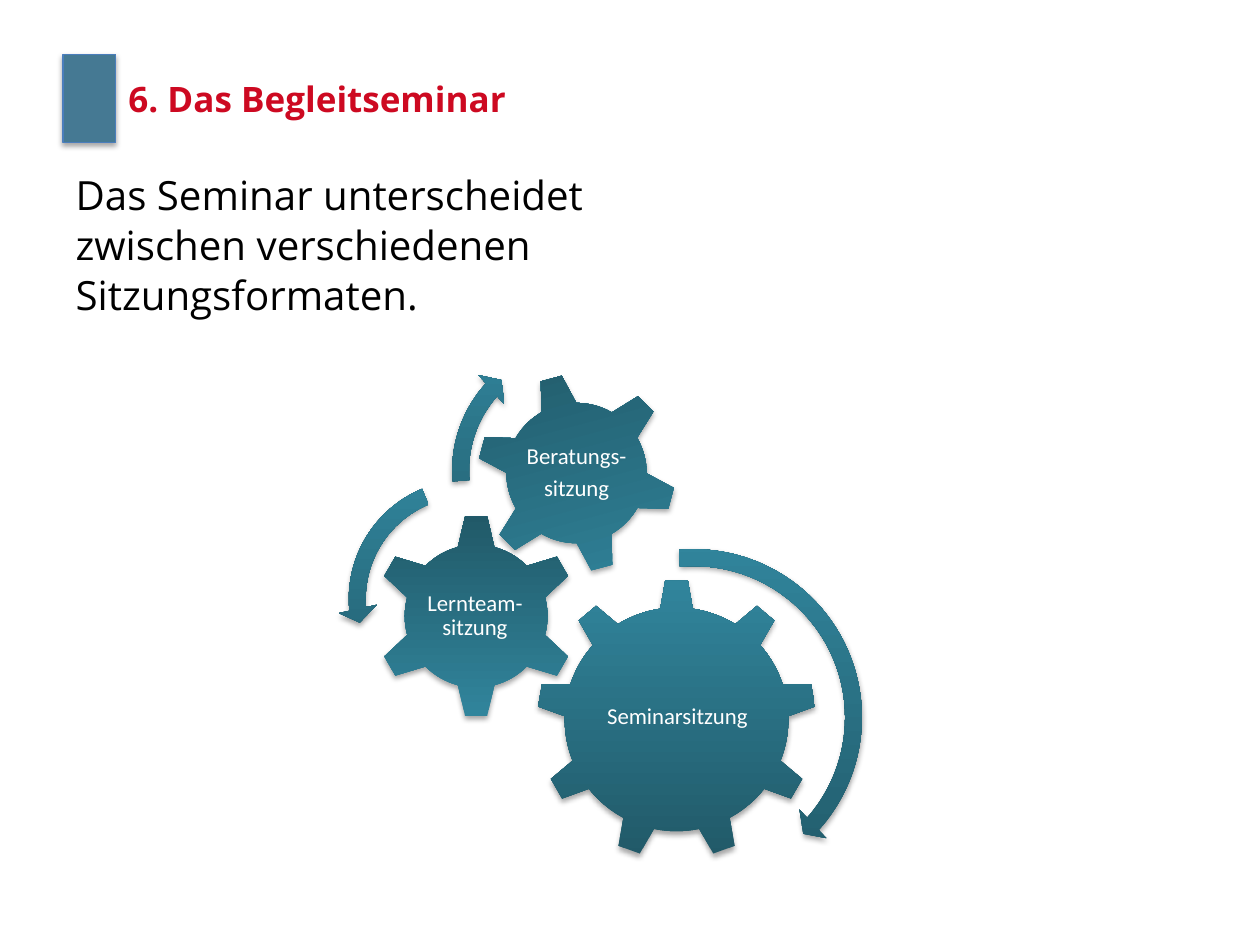
from lxml import etree
from pptx import Presentation
from pptx.dml.color import RGBColor as RGB
from pptx.enum.shapes import MSO_SHAPE as SHAPE
from pptx.enum.text import MSO_ANCHOR as ANCHOR, MSO_AUTO_SIZE as AUTOSIZE, PP_ALIGN as ALIGN
from pptx.oxml import parse_xml
from pptx.oxml.ns import nsdecls, qn
from pptx.util import Pt

COLORS = {
    "marker": "457993",
    "marker_line": "4B7EBC",
    "title": "CD0921",
    "body": "000000",
    "label": "FFFFFF",
    "dark": "215968",
    "light": "31859C",
    "shadow": "000000",
}


class SeminarSlide:
    heading_font = "Open Sans"
    label_font = "Calibri"

    def __init__(self, presentation):
        self.slide = presentation.slides.add_slide(presentation.slide_layouts[1])

    def color(self, name):
        return RGB.from_string(COLORS[name])

    def place(self, shape, left, top, width, height):
        shape.left, shape.top = Pt(left), Pt(top)
        shape.width, shape.height = Pt(width), Pt(height)

    def style(self, font, name, size, color, bold=False):
        font.name, font.size, font.bold = name, Pt(size), bold
        font.color.rgb = self.color(color)

    def add_shadow(self, shape):
        shape.shadow.inherit = False
        effects = shape._element.spPr.find(qn("a:effectLst"))
        effects.append(parse_xml(
            f'<a:outerShdw {nsdecls("a")} blurRad="{Pt(3.1)}" dist="{Pt(1.8)}" '
            f'dir="5400000" rotWithShape="0"><a:srgbClr val="{COLORS["shadow"]}">'
            '<a:alpha val="35000"/></a:srgbClr></a:outerShdw>'))

    def marker(self, left, top, width, height):
        shape = self.slide.shapes.add_shape(
            SHAPE.RECTANGLE, Pt(left), Pt(top), Pt(width), Pt(height))
        shape.fill.solid()
        shape.fill.fore_color.rgb = self.color("marker")
        shape.line.color.rgb = self.color("marker_line")
        shape.line.width = Pt(0.75)
        self.add_shadow(shape)

    def title(self, text, *box):
        shape = self.slide.shapes.title
        self.place(shape, *box)
        frame = shape.text_frame
        frame.text = text
        frame.vertical_anchor = ANCHOR.MIDDLE
        paragraph = frame.paragraphs[0]
        paragraph.alignment = ALIGN.LEFT
        self.style(paragraph.runs[0].font, self.heading_font, 20, "title", True)

    def body(self, lines, *box):
        shape = self.slide.placeholders[1]
        self.place(shape, *box)
        frame = shape.text_frame
        frame.auto_size = AUTOSIZE.NONE
        frame.text = "\n".join(lines)
        for index, paragraph in enumerate(frame.paragraphs):
            properties = paragraph._p.get_or_add_pPr()
            properties.set("marL", "0")
            properties.set("indent", "0")
            etree.SubElement(properties, qn("a:buNone"))
            paragraph.space_before = Pt(1 if index else 0)
            self.style(paragraph.runs[0].font, self.heading_font, 23, "body")

    def gradient_shape(self, kind, left, top, size, bottom, adjustments=(), rotation=0):
        shape = self.slide.shapes.add_shape(kind, Pt(left), Pt(top), Pt(size), Pt(size))
        for index, value in enumerate(adjustments):
            shape.adjustments[index] = value
        shape.rotation = rotation
        shape.fill.gradient()
        shape.fill.gradient_angle = 90
        ends = ("dark", "light") if bottom == "dark" else ("light", "dark")
        for stop, name in zip(shape.fill.gradient_stops, ends):
            stop.color.rgb = self.color(name)
        shape.line.fill.background()
        self.add_shadow(shape)

    def label(self, text, left, top, width, height):
        box = self.slide.shapes.add_textbox(Pt(left), Pt(top), Pt(width), Pt(height))
        frame = box.text_frame
        frame.word_wrap = True
        frame.vertical_anchor = ANCHOR.MIDDLE
        frame.margin_left = frame.margin_right = Pt(1.2)
        frame.margin_top = frame.margin_bottom = Pt(1.2)
        frame.text = text
        for paragraph in frame.paragraphs:
            paragraph.alignment = ALIGN.CENTER
            paragraph.line_spacing = 0.9
            paragraph.space_after = Pt(4.5)
            self.style(paragraph.runs[0].font, self.label_font, 13, "label")


def main():
    presentation = Presentation()
    presentation.slide_width, presentation.slide_height = Pt(720), Pt(540)
    page = SeminarSlide(presentation)

    page.marker(36, 31, 30.2, 50.4)
    page.title("6. Das Begleitseminar", 66.2, 31, 517.7, 50.4)
    page.body(["Das Seminar unterscheidet", "zwischen verschiedenen", "Sitzungsformaten."],
              36, 93.6, 548.6, 390.2)

    gears = [
        (SHAPE.GEAR_9, (306.7, 331.2, 159.8), "dark", 0,
         "Seminarsitzung", (339.1, 368.6, 95.8, 82.1)),
        (SHAPE.GEAR_6, (213.8, 293.8, 116.6), "light", 0,
         "Lernteam-sitzung", (242.6, 323.3, 57.6, 57.6)),
        (SHAPE.GEAR_6, (272.2, 213.1, 114.5), "light", 345,
         "Beratungs-\nsitzung", (297.4, 238.3, 64.1, 64.1)),
    ]
    for kind, square, bottom, rotation, text, text_box in gears:
        page.gradient_shape(kind, *square, bottom, rotation=rotation)
        page.label(text, *text_box)

    arrows = [
        (SHAPE.CIRCULAR_ARROW, (293.8, 307.4, 205.2), (0.047, 2.99, 25.032, 158.895, 0.055)),
        (SHAPE.LEFT_CIRCULAR_ARROW, (193, 267.8, 149), (0.065, 4.3, 104.891, 148.378, 0.075)),
        (SHAPE.CIRCULAR_ARROW, (252, 188.6, 160.6), (0.06, 3.941, 133.138, 105.082, 0.07)),
    ]
    for kind, square, adjustments in arrows:
        page.gradient_shape(kind, *square, "dark", adjustments)

    presentation.save("out.pptx")


if __name__ == "__main__":
    main()
